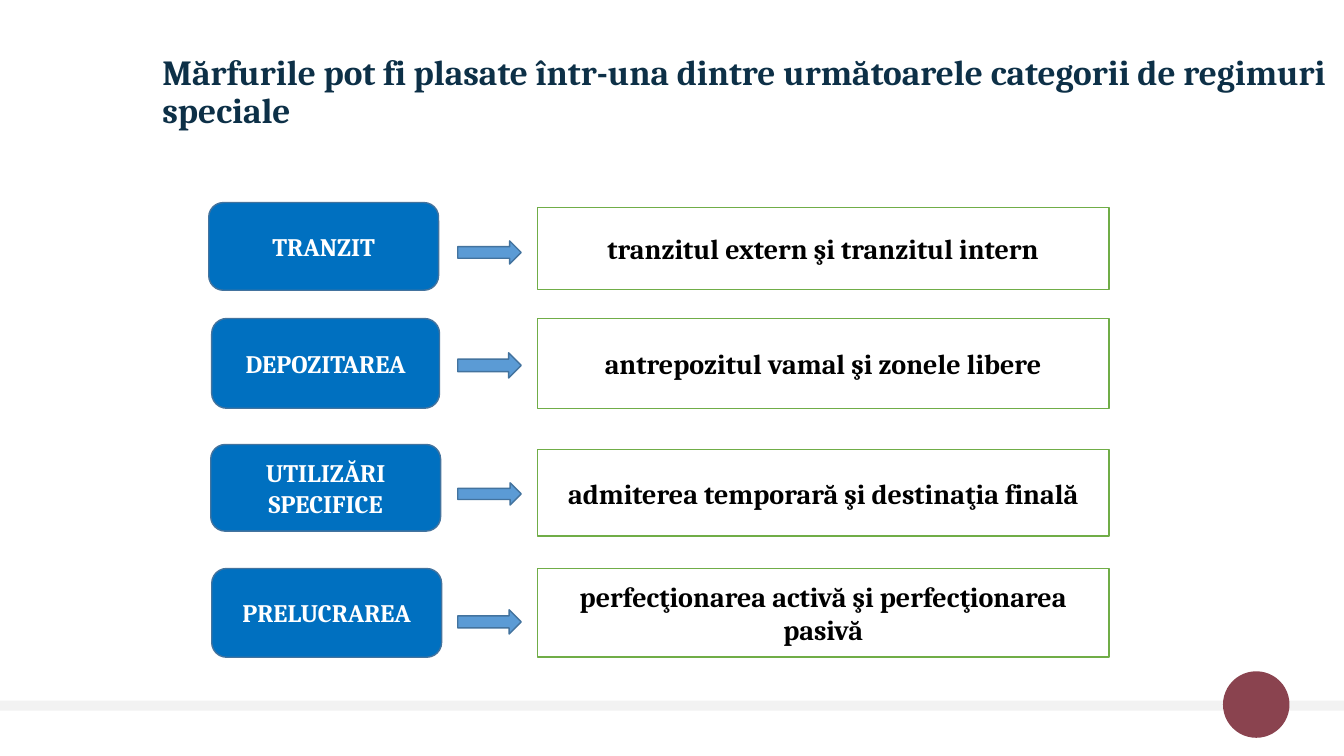
from pptx import Presentation
from pptx.dml.color import RGBColor
from pptx.enum.shapes import MSO_SHAPE
from pptx.enum.text import MSO_ANCHOR, MSO_AUTO_SIZE, PP_ALIGN
from pptx.util import Inches, Pt

COLORS = {
    "title": "0D3047", "band": "F2F2F2", "dot": "8A434F",
    "label": "0070C0", "label_line": "43739E", "arrow": "5B9BD5",
    "detail_line": "70AD47", "white": "FFFFFF", "black": "000000",
}
TITLE = ("Mărfurile pot fi plasate într-una dintre următoarele "
         "categorii de regimuri speciale")

# Label text and box, detail text, top and height, arrow top and height
REGIMES = [
    ("TRANZIT", (2.07, 2.01, 2.28, 0.87),
     "tranzitul extern şi tranzitul intern", (2.06, 0.81), (2.39, 0.23)),
    ("DEPOZITAREA", (2.1, 3.16, 2.26, 0.89),
     "antrepozitul vamal şi zonele libere", (3.16, 0.89), (3.5, 0.25)),
    ("UTILIZĂRI SPECIFICE", (2.09, 4.41, 2.28, 0.86),
     "admiterea temporară şi destinaţia finală", (4.46, 0.86), (4.79, 0.22)),
    ("PRELUCRAREA", (2.1, 5.64, 2.28, 0.88),
     "perfecţionarea activă şi perfecţionarea pasivă", (5.64, 0.88), (6.05, 0.24)),
]
DETAIL_LEFT, DETAIL_WIDTH = 5.33, 5.67
ARROW_LEFT, ARROW_WIDTH = 4.54, 0.63


def color(name):
    return RGBColor.from_string(COLORS[name])


def write(shape, text, size, font_color, align):
    tf = shape.text_frame
    tf.word_wrap = True
    tf.auto_size = MSO_AUTO_SIZE.NONE
    tf.vertical_anchor = MSO_ANCHOR.MIDDLE
    p = tf.paragraphs[0]
    p.alignment = align
    r = p.add_run()
    r.text = text
    for name, value in {"name": "Cambria", "size": Pt(size), "bold": True}.items():
        setattr(r.font, name, value)
    r.font.color.rgb = color(font_color)
    return p


def add_box(s, kind, box, fill, line=None):
    sp = s.shapes.add_shape(kind, *map(Inches, box))
    sp.shadow.inherit = False
    sp.fill.solid()
    sp.fill.fore_color.rgb = color(fill)
    if line:
        sp.line.color.rgb = color(line)
        sp.line.width = Pt(1)
    else:
        sp.line.fill.background()
    return sp


def add_footer(s, left, top, width, height):
    """Draw the thin band with the round accent near its right end."""
    diameter = 0.66
    add_box(s, MSO_SHAPE.RECTANGLE, (left, top, width, height), "band")
    add_box(s, MSO_SHAPE.OVAL,
            (left + width - 1.2, top + height / 2 - diameter / 2 - 0.01,
             diameter, diameter), "dot")


def add_title(s, *box):
    title = s.shapes.title
    for name, value in zip(("left", "top", "width", "height"), box):
        setattr(title, name, Inches(value))
    write(title, TITLE, 25.2, "title", PP_ALIGN.LEFT).line_spacing = 0.9


def add_regime(s, label, label_box, detail, detail_span, arrow_span):
    sp = add_box(s, MSO_SHAPE.ROUNDED_RECTANGLE, label_box, "label", "label_line")
    write(sp, label, 18, "white", PP_ALIGN.CENTER)

    top, height = detail_span
    sp = add_box(s, MSO_SHAPE.RECTANGLE,
                 (DETAIL_LEFT, top, DETAIL_WIDTH, height), "white", "detail_line")
    write(sp, detail, 20, "black", PP_ALIGN.CENTER)

    top, height = arrow_span
    add_box(s, MSO_SHAPE.RIGHT_ARROW,
            (ARROW_LEFT, top, ARROW_WIDTH, height), "arrow", "label_line")


def main():
    prs = Presentation()
    prs.slide_width, prs.slide_height = Inches(13.33), Inches(7.5)
    s = prs.slides.add_slide(prs.slide_layouts[5])
    add_footer(s, 0, 6.95, 13.33, 0.1)
    add_title(s, 1.51, 0.47, 11.83, 0.91)
    for regime in REGIMES:
        add_regime(s, *regime)
    prs.save("out.pptx")


if __name__ == "__main__":
    main()
